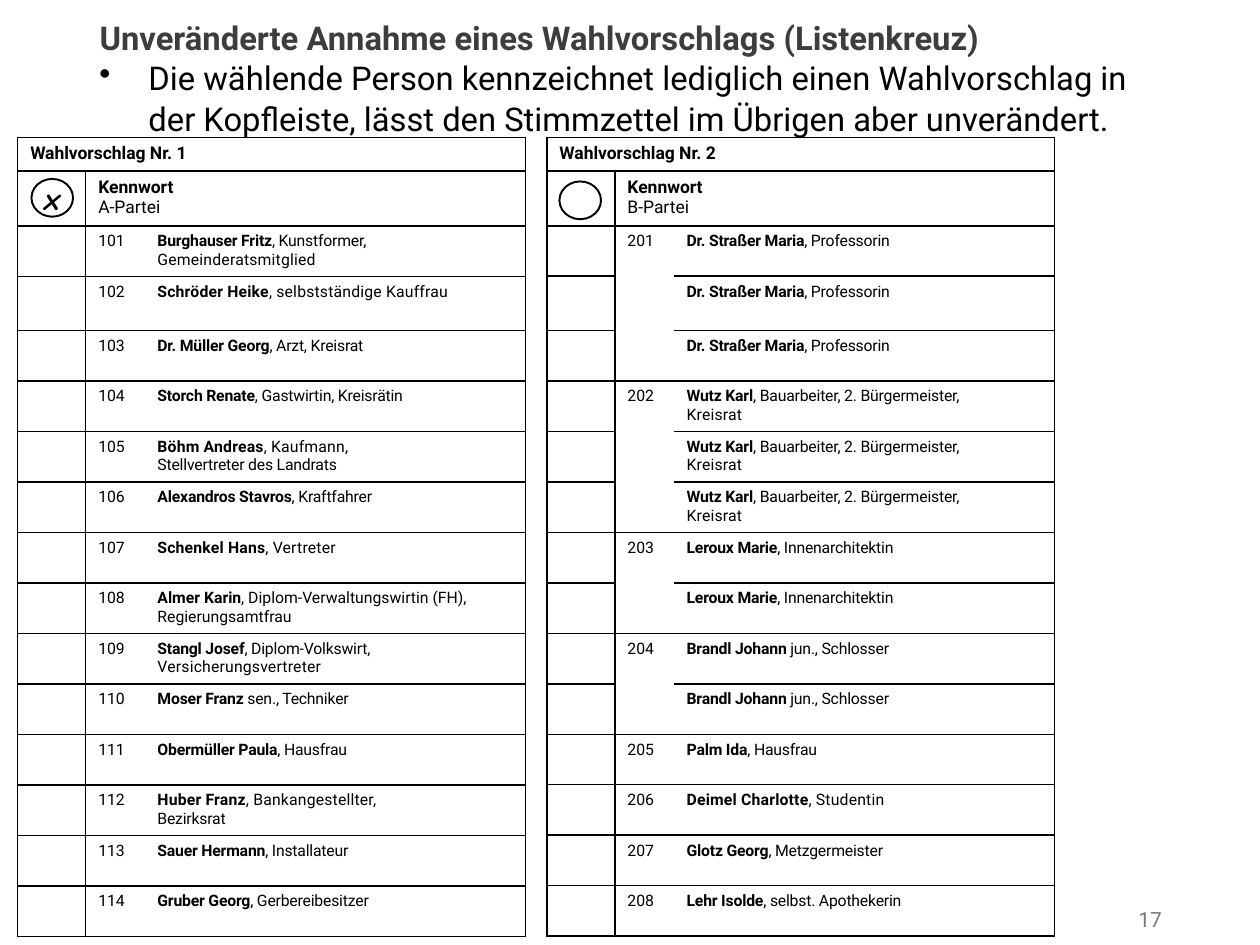
from lxml.etree import SubElement
from pptx import Presentation
from pptx.dml.color import RGBColor
from pptx.enum.shapes import MSO_SHAPE
from pptx.enum.text import MSO_ANCHOR, MSO_AUTO_SIZE, PP_ALIGN
from pptx.oxml.ns import qn
from pptx.util import Inches, Pt

BLACK, HEADING, GREY = "000000", "3D3E3C", "797979"
NO_STYLE = "{2D5ABB26-0587-4C30-8999-92F81FD0307C}"
COLUMNS = [0.54, 0.47, 3.02]
ROWS = [0.26, 0.43, 0.39, 0.43] + [0.39] * 12
TIGHT, LOOSE = -0.1, 0.1

LIST_A = [
    ("101", "Burghauser Fritz", [", Kunstformer,", "Gemeinderatsmitglied"], TIGHT),
    ("102", "Schröder Heike", [", selbstständige Kauffrau"], LOOSE),
    ("103", "Dr. Müller Georg", [", Arzt, Kreisrat"], TIGHT),
    ("104", "Storch Renate", [", Gastwirtin, Kreisrätin"], TIGHT),
    ("105", "Böhm Andreas", [", Kaufmann,", "Stellvertreter des Landrats"], LOOSE),
    ("106", "Alexandros Stavros", [", Kraftfahrer"], TIGHT),
    ("107", "Schenkel Hans", [", Vertreter"], LOOSE),
    ("108", "Almer Karin", [", Diplom-Verwaltungswirtin (FH), Regierungsamtfrau"], 0),
    ("109", "Stangl Josef", [", Diplom-Volkswirt,", "Versicherungsvertreter"], TIGHT),
    ("110", "Moser Franz", [" sen., Techniker"], TIGHT),
    ("111", "Obermüller Paula", [", Hausfrau"], TIGHT),
    ("112", "Huber Franz", [", Bankangestellter,", "Bezirksrat"], LOOSE),
    ("113", "Sauer Hermann", [", Installateur"], TIGHT),
    ("114", "Gruber Georg", [", Gerbereibesitzer"], TIGHT),
]


def repeated(number, times, name, lines, tracking=TIGHT):
    return [(number if i == 0 else "", name, lines, tracking) for i in range(times)]


LIST_B = [
    *repeated("201", 3, "Dr. Straßer Maria", [", Professorin"]),
    *repeated("202", 3, "Wutz Karl", [", Bauarbeiter, 2. Bürgermeister,", "Kreisrat"]),
    *repeated("203", 2, "Leroux Marie", [", Innenarchitektin"]),
    *repeated("204", 2, "Brandl Johann", [" jun., Schlosser"]),
    *repeated("205", 1, "Palm Ida", [", Hausfrau"]),
    *repeated("206", 1, "Deimel Charlotte", [", Studentin"], LOOSE),
    *repeated("207", 1, "Glotz Georg", [", Metzgermeister"]),
    *repeated("208", 1, "Lehr Isolde", [", selbst. Apothekerin"]),
]


def color(value):
    return RGBColor.from_string(value)


def style(font, size, value=BLACK, bold=None, name="Roboto"):
    font.name, font.size, font.bold = name, Pt(size), bold
    font.color.rgb = color(value)


def add_text_box(page, left, top, width, height):
    box = page.shapes.add_textbox(Inches(left), Inches(top), Inches(width), Inches(height))
    box.text_frame.word_wrap = True
    return box.text_frame


def add_heading(page, left, top, width):
    title = page.shapes.title
    title.left, title.top = Inches(left), Inches(top)
    title.width, title.height = Inches(width), Inches(0.36)
    frame = title.text_frame
    frame.text = "Unveränderte Annahme eines Wahlvorschlags (Listenkreuz)"
    frame.auto_size = MSO_AUTO_SIZE.NONE
    frame.vertical_anchor = MSO_ANCHOR.TOP
    para = frame.paragraphs[0]
    para.alignment, para.line_spacing = PP_ALIGN.LEFT, 1.04
    style(para.font, 18.7, HEADING, True)

    frame = add_text_box(page, left, top + 0.32, width, 0.8)
    para = frame.paragraphs[0]
    para.text = ("Die wählende Person kennzeichnet lediglich einen Wahlvorschlag in "
                 "der Kopfleiste, lässt den Stimmzettel im Übrigen aber unverändert.")
    props = para._p.get_or_add_pPr()
    props.set("marL", str(Inches(0.39)))
    props.set("indent", str(-Inches(0.39)))
    SubElement(props, qn("a:buChar")).set("char", "•")
    para.line_spacing = 1.04
    style(para.font, 18.7)


def set_borders(cell, sides):
    props = cell._tc.get_or_add_tcPr()
    for side in "LRTB":
        line = SubElement(props, qn(f"a:ln{side}"), w=str(Pt(1)))
        if side in sides:
            fill = SubElement(line, qn("a:solidFill"))
            SubElement(fill, qn("a:srgbClr"), val=BLACK)
        else:
            SubElement(line, qn("a:noFill"))
    cell.fill.background()


def write_lines(cell, lines, size, bolds):
    cell.text = "\n".join(lines)
    for para, bold in zip(cell.text_frame.paragraphs, bolds):
        style(para.font, size, bold=bold)


def write_candidate(cell, name, lines, tracking):
    frame = cell.text_frame
    for index, line in enumerate(lines):
        para = frame.add_paragraph() if index else frame.paragraphs[0]
        style(para.font, 9)
        parts = [(line, False)] if index else [(name, True), (line, False)]
        for text, bold in parts:
            span = para.add_run()
            span.text, span.font.bold = text, bold
            spacing = -tracking if index else tracking
            span.font._element.set("spc", str(round(spacing * 100)))


def add_ballot(page, left, top, heading, party, candidates):
    shape = page.shapes.add_table(len(ROWS), len(COLUMNS), Inches(left), Inches(top),
                                  Inches(sum(COLUMNS)), Inches(sum(ROWS)))
    table = shape.table
    table.first_row = table.horz_banding = False
    table._tbl.tblPr.find(qn("a:tableStyleId")).text = NO_STYLE
    for column, width in zip(table.columns, COLUMNS):
        column.width = Inches(width)
    for row, height in zip(table.rows, ROWS):
        row.height = Inches(height)

    for row in range(2):
        for column in range(3):
            set_borders(table.cell(row, column), "LRTB")
    table.cell(0, 0).merge(table.cell(0, 2))
    table.cell(1, 1).merge(table.cell(1, 2))
    write_lines(table.cell(0, 0), [heading], 10, [True])
    write_lines(table.cell(1, 1), ["Kennwort", party], 10, [True, False])

    following = [number for number, *_ in candidates[1:]] + ["end"]
    for row, (candidate, next_number) in enumerate(zip(candidates, following), 2):
        number, name, lines, tracking = candidate
        choice, label, person = (table.cell(row, column) for column in range(3))
        set_borders(choice, "LRTB")
        set_borders(label, "L" + ("T" if number else "") + ("B" if next_number else ""))
        set_borders(person, "RTB")
        if number:
            write_lines(label, [number], 9, [False])
        write_candidate(person, name, lines, tracking)


def add_list_circle(page, left, top, mark=""):
    circle = page.shapes.add_shape(MSO_SHAPE.OVAL, Inches(left), Inches(top),
                                   Inches(0.33), Inches(0.3))
    circle.shadow.inherit = False
    circle.fill.background()
    circle.line.color.rgb = color(BLACK)
    circle.line.width = Pt(1.1)
    if mark:
        frame = circle.text_frame
        frame.margin_left = frame.margin_right = frame.margin_top = frame.margin_bottom = 0
        frame.word_wrap = False
        frame.vertical_anchor = MSO_ANCHOR.MIDDLE
        para = frame.paragraphs[0]
        para.text, para.alignment = mark, PP_ALIGN.CENTER
        style(para.font, 18, bold=True, name="Comic Neue")
        para.font.italic = True


def add_page_number(page, left, top, width, height):
    frame = add_text_box(page, left, top, width, height)
    frame.vertical_anchor = MSO_ANCHOR.MIDDLE
    para = frame.paragraphs[0]
    para.text, para.alignment = "17", PP_ALIGN.RIGHT
    style(para.font, 12, GREY)


def main():
    deck = Presentation()
    deck.slide_width, deck.slide_height = Inches(10), Inches(7.5)
    page = deck.slides.add_slide(deck.slide_layouts[5])
    add_page_number(page, 8.42, 7.17, 0.9, 0.25)
    add_heading(page, 0.69, 0.08, 8.63)
    add_ballot(page, 0.14, 1.09, "Wahlvorschlag Nr. 1", "A-Partei", LIST_A)
    add_list_circle(page, 0.25, 1.42, "x")
    add_ballot(page, 4.34, 1.09, "Wahlvorschlag Nr. 2", "B-Partei", LIST_B)
    add_list_circle(page, 4.44, 1.44)
    deck.save("out.pptx")


if __name__ == "__main__":
    main()
